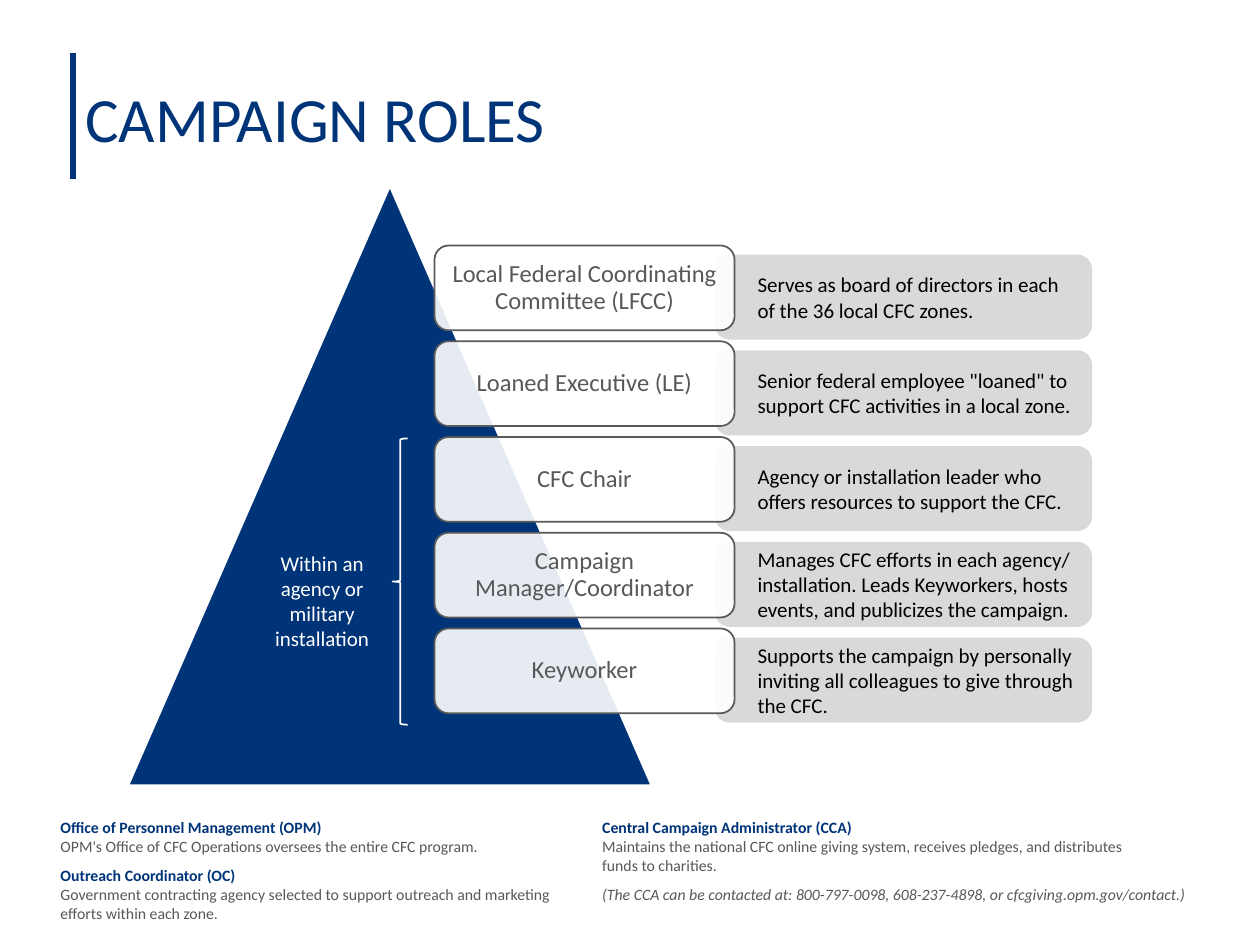
from collections import namedtuple

from lxml.etree import SubElement
from pptx import Presentation
from pptx.dml.color import RGBColor
from pptx.enum.shapes import MSO_CONNECTOR, MSO_SHAPE
from pptx.enum.text import MSO_ANCHOR, PP_ALIGN
from pptx.oxml.ns import qn
from pptx.util import Cm, Pt

NAVY = RGBColor(0x00, 0x34, 0x79)
WHITE = RGBColor(0xFF, 0xFF, 0xFF)
BLACK = RGBColor(0x00, 0x00, 0x00)
PALE_GRAY = RGBColor(0xD9, 0xD9, 0xD9)
OUTLINE_GRAY = RGBColor(0x58, 0x59, 0x5B)
TEXT_GRAY = RGBColor(0x58, 0x58, 0x5B)
FONT = "Calibri"

Box = namedtuple("Box", "left top width height")
Line = namedtuple("Line", "text color bold italic after", defaults=(TEXT_GRAY, False, False, 0))

ROLES = [
    ("Local Federal Coordinating Committee (LFCC)",
     "Serves as board of directors in each of the 36 local CFC zones."),
    ("Loaned Executive (LE)",
     "Senior federal employee \"loaned\" to support CFC activities in a local zone."),
    ("CFC Chair",
     "Agency or installation leader who offers resources to support the CFC."),
    ("Campaign Manager/Coordinator",
     "Manages CFC efforts in each agency/ installation. Leads Keyworkers, hosts events, "
     "and publicizes the campaign."),
    ("Keyworker",
     "Supports the campaign by personally inviting all colleagues to give through the CFC."),
]
OFFICES = [
    Line("Office of Personnel Management (OPM)", NAVY, bold=True),
    Line("OPM's Office of CFC Operations oversees the entire CFC program.", after=6),
    Line("Outreach Coordinator (OC)", NAVY, bold=True),
    Line("Government contracting agency selected to support outreach and marketing "
         "efforts within each zone.", after=6),
]
ADMINISTRATOR = [
    Line("Central Campaign Administrator (CCA)", NAVY, bold=True),
    Line("Maintains the national CFC online giving system, receives pledges, and distributes"),
    Line("funds to charities.", after=6),
    Line("(The CCA can be contacted at: 800-797-0098, 608-237-4898, "
         "or cfcgiving.opm.gov/contact.)", italic=True),
]


def place(box):
    """Return the box as four slide lengths."""
    return [Cm(value) for value in box]


def add_span(para, text, size, color, bold=False, italic=False):
    """Add one styled run to a paragraph."""
    span = para.add_run()
    span.text = text
    font = span.font
    font.name, font.size, font.color.rgb = FONT, Pt(size), color
    font.bold, font.italic = bold, italic


def add_text(page, box):
    """Add an empty wrapping text box and return its frame."""
    frame = page.shapes.add_textbox(*place(box)).text_frame
    frame.word_wrap = True
    return frame


def add_panel(page, kind, box, fill, outline):
    """Add a flat preset shape; a fill of None leaves it open."""
    panel = page.shapes.add_shape(kind, *place(box))
    panel.shadow.inherit = False
    if fill is None:
        panel.fill.background()
    else:
        panel.fill.solid()
        panel.fill.fore_color.rgb = fill
    panel.line.color.rgb, panel.line.width = outline, Pt(1)
    return panel


def add_title(page, box):
    """Place the heading and the upright rule at its left edge."""
    left = Cm(box.left)
    rule = page.shapes.add_connector(
        MSO_CONNECTOR.STRAIGHT, left, Cm(box.top), left, Cm(box.top + box.height))
    rule.line.color.rgb, rule.line.width = NAVY, Pt(3)
    SubElement(rule.element.spPr, qn("a:effectLst"))
    frame = add_text(page, Box(box.left, box.top + 0.3, box.width, 1.85))
    frame.vertical_anchor = MSO_ANCHOR.MIDDLE
    para = frame.paragraphs[0]
    para.line_spacing = 1.08
    add_span(para, "CAMPAIGN ROLES", 36, NAVY)


def add_pyramid(page, box):
    """Place the triangle with its braced note."""
    add_panel(page, MSO_SHAPE.ISOSCELES_TRIANGLE, box, NAVY, WHITE)
    frame = add_text(page, Box(box.left + 2.19, box.top + 7.21, 3.43, 2.31))
    para = frame.paragraphs[0]
    para.alignment = PP_ALIGN.CENTER
    add_span(para, "Within an agency or military installation", 12, WHITE)
    brace = Box(box.left + 5.33, box.top + 5.08, 0.3, 5.77)
    add_panel(page, MSO_SHAPE.LEFT_BRACE, brace, None, WHITE)


def add_role(page, box, name, duty):
    """Place one role card over its description."""
    back = Box(box.left + 5.67, box.top + 0.2, box.width - 5.67, 1.68)
    frame = add_panel(page, MSO_SHAPE.ROUNDED_RECTANGLE, back, PALE_GRAY, PALE_GRAY).text_frame
    frame.word_wrap, frame.vertical_anchor = True, MSO_ANCHOR.MIDDLE
    frame.margin_left = Cm(0.76)
    para = frame.paragraphs[0]
    para.alignment = PP_ALIGN.LEFT
    add_span(para, duty, 12, BLACK)

    front = Box(box.left, box.top, 6.05, box.height)
    card = add_panel(page, MSO_SHAPE.ROUNDED_RECTANGLE, front, WHITE, OUTLINE_GRAY)
    color = card.element.spPr.find(qn("a:solidFill"))[0]
    SubElement(color, qn("a:alpha"), val="90000")
    frame = card.text_frame
    frame.word_wrap, frame.vertical_anchor = True, MSO_ANCHOR.MIDDLE
    frame.margin_left = frame.margin_right = Cm(0.23)
    frame.margin_top = frame.margin_bottom = Cm(0.23)
    para = frame.paragraphs[0]
    para.alignment, para.line_spacing = PP_ALIGN.CENTER, 0.9
    add_span(para, name, 14, TEXT_GRAY)


def add_roles(page, box):
    """Stack the roles at an equal pitch inside the box."""
    height = 1.71
    pitch = (box.height - height) / (len(ROLES) - 1)
    for index, (name, duty) in enumerate(ROLES):
        add_role(page, Box(box.left, box.top + index * pitch, box.width, height), name, duty)


def add_contacts(page, box, lines):
    """Place one column of the footer."""
    frame = add_text(page, box)
    for index, line in enumerate(lines):
        para = frame.add_paragraph() if index else frame.paragraphs[0]
        para.space_after = Pt(line.after)
        add_span(para, line.text, 9, line.color, line.bold, line.italic)


def main():
    """Build and save the slide."""
    deck = Presentation()
    deck.slide_width, deck.slide_height = Cm(25.4), Cm(19.05)
    page = deck.slides.add_slide(deck.slide_layouts[6])
    add_title(page, Box(1.47, 1.07, 23.06, 2.54))
    add_pyramid(page, Box(2.59, 3.76, 10.54, 12.07))
    add_roles(page, Box(8.76, 4.95, 13.24, 9.43))
    add_contacts(page, Box(0.97, 16.36, 10.92, 2.39), OFFICES)
    add_contacts(page, Box(11.89, 16.36, 12.67, 2.01), ADMINISTRATOR)
    deck.save("out.pptx")


if __name__ == "__main__":
    main()
